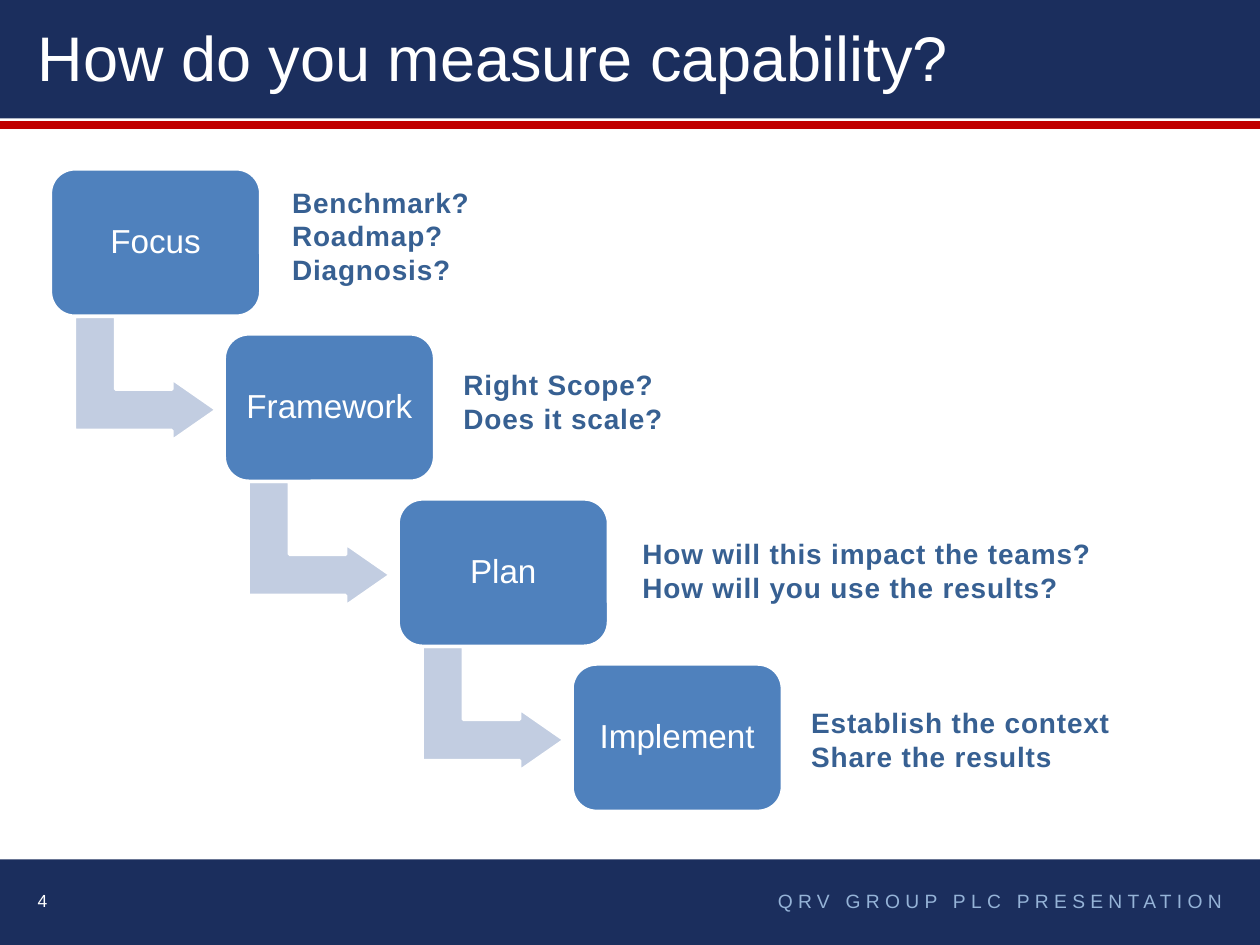
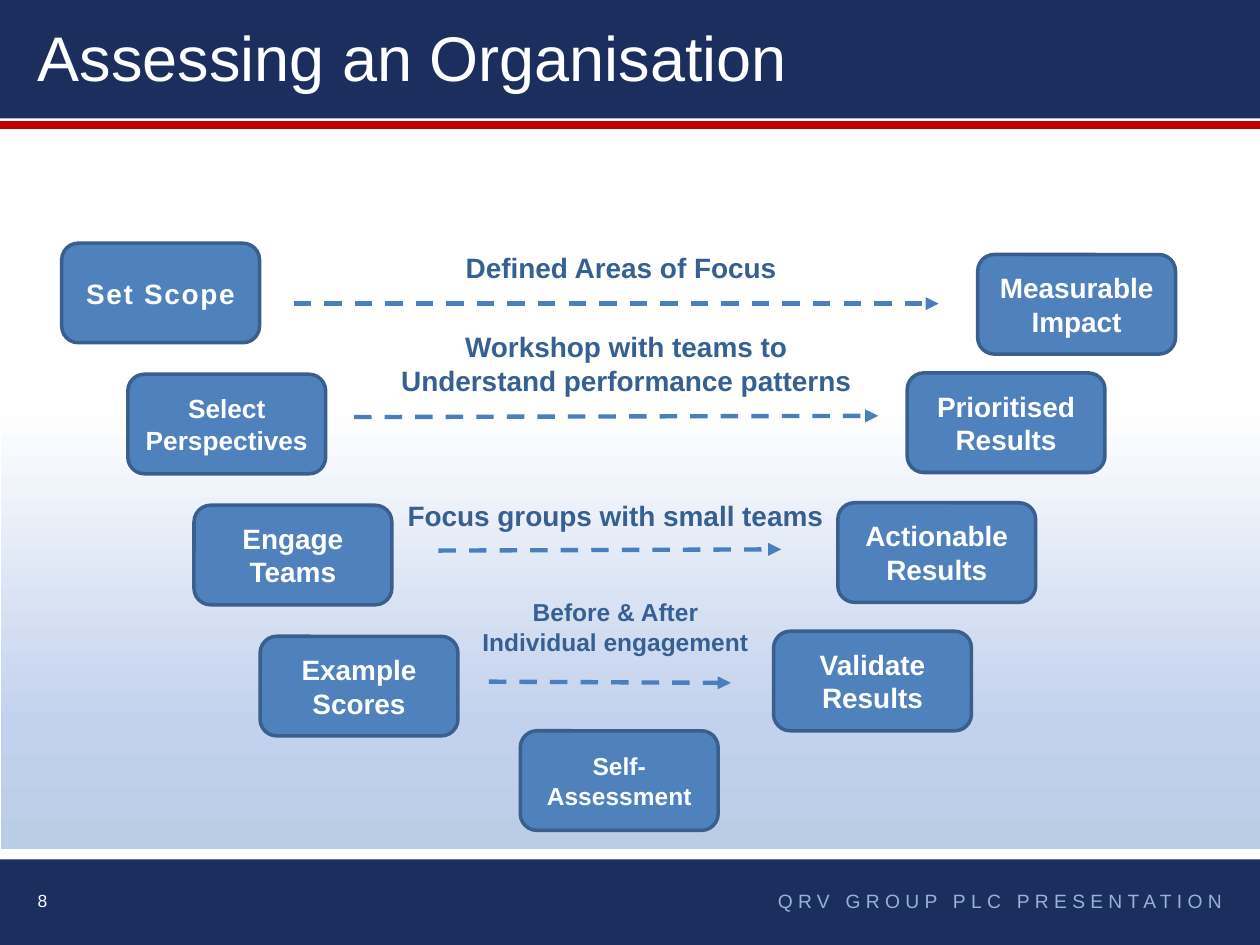
from lxml import etree
from pptx import Presentation
from pptx.dml.color import RGBColor
from pptx.enum.dml import MSO_LINE
from pptx.enum.shapes import MSO_CONNECTOR, MSO_SHAPE
from pptx.enum.text import MSO_ANCHOR, PP_ALIGN
from pptx.oxml.ns import qn
from pptx.util import Inches, Pt

LEFT, MID, RIGHT = PP_ALIGN.LEFT, PP_ALIGN.CENTER, PP_ALIGN.RIGHT
TOP, CENTRE = MSO_ANCHOR.TOP, MSO_ANCHOR.MIDDLE
RECT, ROUND = MSO_SHAPE.RECTANGLE, MSO_SHAPE.ROUNDED_RECTANGLE
BENT = MSO_SHAPE.BENT_UP_ARROW
STRAIGHT, DASH = MSO_CONNECTOR.STRAIGHT, MSO_LINE.DASH

FONT = "Arial"
COLS, ROWS = 100, 75
HEX = {
    "navy": "1B2E5D", "red": "C00000", "white": "FFFFFF", "pale": "95B3D7",
    "blue": "4F81BD", "edge": "3A5F8C", "mist": "C2CDE1", "ink": "376092",
    "dash": "4B7EBC", "sky": "B9CDE5", "haze": "C2D1ED",
}


def tint(name):
    """Return the named colour."""
    return RGBColor.from_string(HEX[name])


def write(shape, text, size=16, color="white", bold=False, align=LEFT,
          anchor=TOP, gap=0, lead=None, inset=0.1):
    """Fill a shape with one formatted paragraph per line of text."""
    frame = shape.text_frame
    frame.word_wrap = True
    frame.vertical_anchor = anchor
    frame.margin_left = frame.margin_right = Inches(inset)
    frame.margin_top = frame.margin_bottom = Inches(inset if inset < 0.1 else 0.05)
    frame.text = text
    for para in frame.paragraphs:
        para.alignment = align
        para.line_spacing = lead
        for run in para.runs:
            font = run.font
            font.name, font.size, font.bold = FONT, Pt(size), bold
            font.color.rgb = tint(color)
            if gap:
                font._element.set("spc", str(int(gap * 100)))


class Deck:
    """Hold the shared style and the current slide."""

    def __init__(self):
        """Start a deck on a grid of columns and rows."""
        self.show = Presentation()
        self.show.slide_width, self.show.slide_height = Inches(10), Inches(7.5)
        self.col = self.show.slide_width / COLS
        self.row = self.show.slide_height / ROWS

    def place(self, x, y, w, h):
        """Turn grid units into slide lengths."""
        return [int(n * unit) for n, unit in
                zip((x, y, w, h), (self.col, self.row) * 2)]

    def page(self, title, number, fade=False):
        """Add a slide with its bands, title and footer."""
        self.slide = self.show.slides.add_slide(self.show.slide_layouts[5])
        self.shapes = self.slide.shapes
        self.box(RECT, (0, 68.2, COLS, 6.8), "navy")
        self.box(RECT, (0, 0, COLS, 9.4), "navy")
        self.line((0, 9.9), (COLS, 9.9), "red", 4.5)
        if fade:
            self.fade((0.1, 11.5, 99.9, 55.9), [(0, "sky"), (18, "haze"), (63, "white")])
        head = self.shapes.title
        head.left, head.top, head.width, head.height = self.place(2, 0.5, 89.8, 7.9)
        write(head, title, size=36, anchor=CENTRE)
        self.shapes._spTree.append(head._element)
        self.note((2, 69.5, 15.3, 4), str(number), size=10, anchor=CENTRE)
        self.note((27.2, 69.5, 70.8, 4), "QRV GROUP PLC PRESENTATION", size=11,
                  color="pale", align=RIGHT, anchor=CENTRE, gap=3)

    def box(self, kind, area, fill, edge=None, turn=0, adjust=()):
        """Add a flat preset shape."""
        shape = self.shapes.add_shape(kind, *self.place(*area))
        shape.shadow.inherit = False
        shape.rotation = turn
        shape.fill.solid()
        shape.fill.fore_color.rgb = tint(fill)
        if edge:
            shape.line.color.rgb = tint(edge)
            shape.line.width = Pt(2)
        else:
            shape.line.fill.background()
        for i, value in enumerate(adjust):
            shape.adjustments[i] = value
        return shape

    def fade(self, area, stops):
        """Add a rectangle that blends from bottom to top."""
        shape = self.box(RECT, area, "white")
        solid = shape._element.spPr.find(qn("a:solidFill"))
        grad = etree.Element(qn("a:gradFill"), rotWithShape="1")
        items = etree.SubElement(grad, qn("a:gsLst"))
        for share, name in stops + [(100, stops[-1][1])]:
            stop = etree.SubElement(items, qn("a:gs"), pos=str(share * 1000))
            etree.SubElement(stop, qn("a:srgbClr"), val=HEX[name])
        etree.SubElement(grad, qn("a:lin"), ang="16200000", scaled="0")
        solid.getparent().replace(solid, grad)

    def line(self, start, end, color, width, arrow=False):
        """Add a straight line, or a dashed arrow."""
        link = self.shapes.add_connector(STRAIGHT, *self.place(*start, *end))
        link.line.color.rgb = tint(color)
        link.line.width = Pt(width)
        if arrow:
            link.line.dash_style = DASH
            etree.SubElement(link.line._get_or_add_ln(), qn("a:tailEnd"), type="triangle")
        etree.SubElement(link._element.spPr, qn("a:effectLst"))

    def note(self, area, text, **style):
        """Add a text box."""
        write(self.shapes.add_textbox(*self.place(*area)), text, **style)

    def card(self, x, y, text, size=16, gap=0):
        """Add an outlined box with a bold label."""
        shape = self.box(ROUND, (x, y, 15.7, 7.9), "blue", "edge")
        write(shape, text, size=size, bold=True, align=MID, anchor=CENTRE, gap=gap)


def measure(deck):
    """Build the staircase of four steps and their questions."""
    deck.page("How do you measure capability?", 4)
    steps = [
        ("Focus", "Benchmark?\nRoadmap?\nDiagnosis?", (22.2, 14.2, 20, 9.1)),
        ("Framework", "Right Scope?\nDoes it scale?", (35.8, 28.7, 18.1, 6.4)),
        ("Plan", "How will this impact the teams?\nHow will you use the results?",
         (50, 42.1, 38.2, 6.4)),
        ("Implement", "Establish the context\nShare the results", (63.4, 55.5, 28.3, 6.4)),
    ]
    for i, (name, asks, area) in enumerate(steps):
        x, y = 4 + 13.8 * i, 13.4 + 13.1 * i
        if i < len(steps) - 1:
            deck.box(BENT, (x + 2.6, y + 11, 9.9, 11.3), "mist", "white",
                     turn=90, adjust=(0.33, 0.25, 0.36))
        step = deck.box(ROUND, (x, y, 16.7, 11.7), "blue", "white")
        write(step, name, size=19, align=MID, anchor=CENTRE, lead=0.9, inset=0.08)
        deck.note(area, asks, color="ink", bold=True, gap=0.5)


def assess(deck):
    """Build the funnel from scope to results."""
    deck.page("Assessing an Organisation", 8, fade=True)
    inputs = [("Set Scope", 16, 1), ("Select Perspectives", 15, 0),
              ("Engage Teams", 16, 0), ("Example Scores", 16, 0)]
    for i, (name, size, gap) in enumerate(inputs):
        deck.card(4.9 + 5.25 * i, 19.3 + 10.4 * i, name, size, gap)
    results = [(77.6, 20.2, "Measurable Impact"), (72, 29.6, "Prioritised Results"),
               (66.5, 39.9, "Actionable Results"), (61.4, 50.1, "Validate\nResults")]
    for x, y, name in results:
        deck.card(x, y, name)
    deck.card(41.3, 58, "Self-Assessment", 14)
    links = [
        ((23.3, 24.1), (74.5, 24.1), (35.8, 19.4, 27, 3.7), 16, "Defined Areas of Focus"),
        ((28.1, 33.1), (69.7, 33), (28.2, 25.7, 43, 6.4), 16,
         "Workshop with teams to\nUnderstand performance patterns"),
        ((34.8, 43.7), (62, 43.6), (31.2, 39.1, 35.3, 3.7), 16,
         "Focus groups with small teams"),
        ((38.8, 54.1), (58, 54.2), (37, 46.9, 23.7, 5.7), 14,
         "Before & After\nIndividual engagement"),
    ]
    for start, end, area, size, text in links:
        deck.line(start, end, "dash", 2.5, arrow=True)
        deck.note(area, text, size=size, color="ink", bold=True, align=MID)


def main():
    """Build and save both slides."""
    deck = Deck()
    measure(deck)
    assess(deck)
    deck.show.save("out.pptx")


if __name__ == "__main__":
    main()
